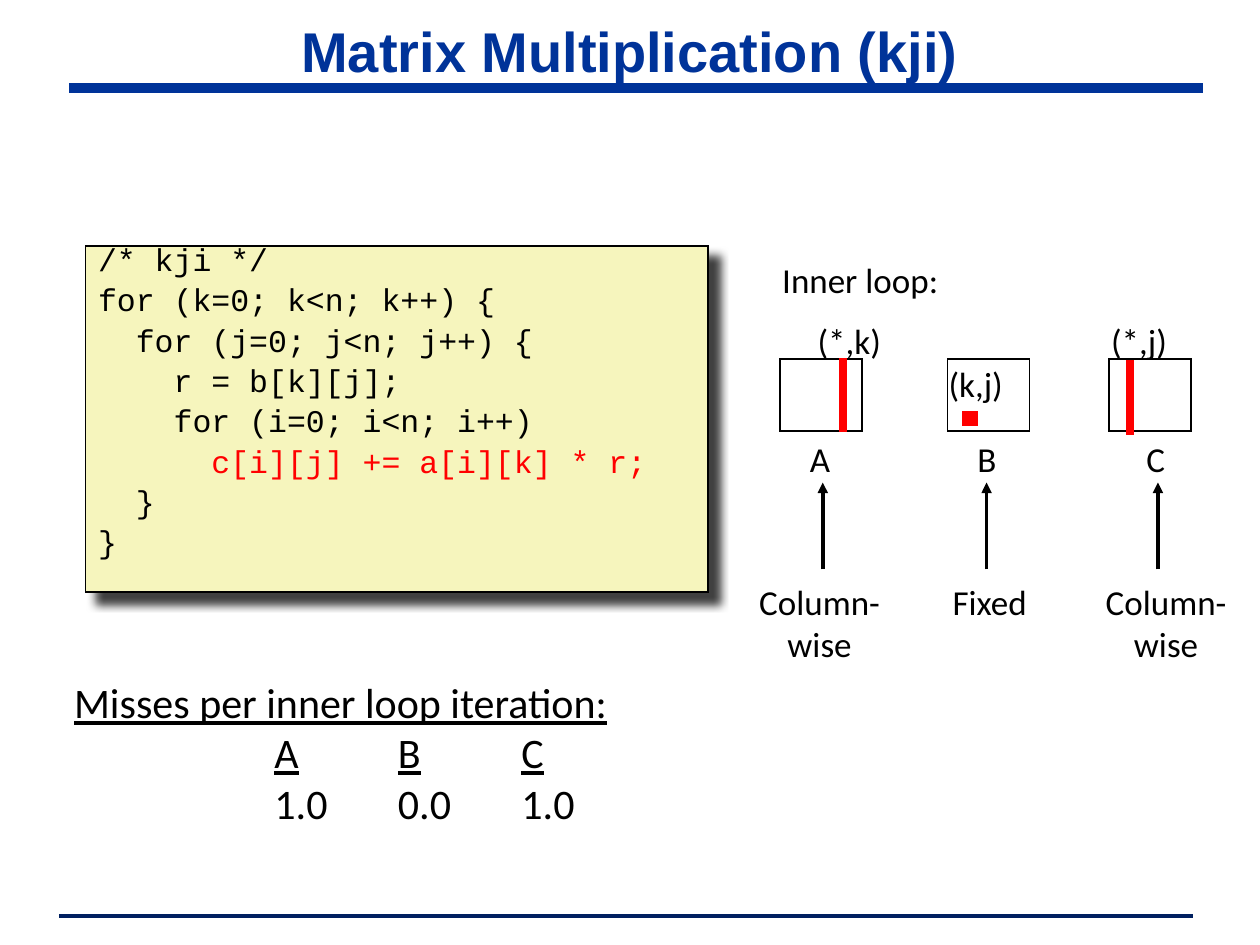
from typing import NamedTuple

from lxml import etree
from pptx import Presentation
from pptx import util as u
from pptx.dml.color import RGBColor
from pptx.enum import shapes, text
from pptx.oxml import ns

COLORS = {
    "black": "000000", "white": "FFFFFF", "red": "FF0000",
    "title": "003399", "footer": "002060", "code": "F6F5BD",
}
CODE = """/* kji */
for (k=0; k<n; k++) {
  for (j=0; j<n; j++) {
    r = b[k][j];
    for (i=0; i<n; i++)
      c[i][j] += a[i][k] * r;
  }
}"""
HOT_LINE = 5
LEFT, CENTER = text.PP_ALIGN.LEFT, text.PP_ALIGN.CENTER


class Matrix(NamedTuple):
    name: str
    left: float
    name_left: float
    index: str
    index_at: tuple[float, float, float, float]
    arrow_x: float
    access: str
    access_at: tuple[float, float, float, float]


MATRICES = [
    Matrix("A", 6.19, 6.33, "(*,k)", (6.39, 2.49, 0.72, 0.43), 6.53,
           "Column-\nwise", (5.92, 4.56, 1.17, 0.77)),
    Matrix("B", 7.52, 7.66, "(k,j)", (7.43, 2.83, 0.65, 0.43), 7.83,
           "Fixed", (7.46, 4.56, 0.79, 0.43)),
    Matrix("C", 8.8, 9, "(*,j)", (8.72, 2.49, 0.66, 0.43), 9.19,
           "Column-\nwise", (8.67, 4.56, 1.17, 0.77)),
]


def color(name: str) -> RGBColor:
    return RGBColor.from_string(COLORS[name])


def add_child(parent, tag: str, **attributes: str):
    return etree.SubElement(parent, ns.qn(tag), attributes)


def add_line(page, start: tuple[float, float], end: tuple[float, float],
             ink: str, width: float, arrow: bool = False) -> None:
    line = page.shapes.add_connector(
        shapes.MSO_CONNECTOR.STRAIGHT, *map(u.Inches, start + end))
    line.line.color.rgb = color(ink)
    line.line.width = u.Pt(width)
    if arrow:
        add_child(line.line._get_or_add_ln(), "a:tailEnd", type="triangle")
    add_child(line._element.spPr, "a:effectLst")


def add_rectangle(page, at: tuple[float, float, float, float], fill: str,
                  ink: str = "black", width: float = 1):
    box = page.shapes.add_shape(
        shapes.MSO_SHAPE.RECTANGLE, *map(u.Inches, at))
    box.shadow.inherit = False
    box.fill.solid()
    box.fill.fore_color.rgb = color(fill)
    box.line.color.rgb = color(ink)
    box.line.width = u.Pt(width)
    add_child(box.line._get_or_add_ln(), "a:miter", lim="800000")
    return box


def format_font(font, face: str, size: float, ink: str = "black") -> None:
    font.name = face
    font.size = u.Pt(size)
    font.color.rgb = color(ink)


def add_label(page, at: tuple[float, float, float, float], words: str,
              align=LEFT, size: float = 20, wrap: bool = False):
    box = page.shapes.add_textbox(*map(u.Inches, at))
    box.text_frame.text = words
    box.text_frame.word_wrap = wrap
    for para in box.text_frame.paragraphs:
        para.alignment = align
        for span in para.runs:
            format_font(span.font, "Calibri", size)
    return box


def add_title(page) -> None:
    box = add_label(page, (0.5, 0.16, 9, 0.47), "Matrix Multiplication (kji)",
                    CENTER, wrap=True)
    box.text_frame.vertical_anchor = text.MSO_ANCHOR.MIDDLE
    font = box.text_frame.paragraphs[0].runs[0].font
    format_font(font, "Arial", 32, "title")
    font.bold = True


def add_code(page) -> None:
    box = add_rectangle(page, (0.68, 1.95, 4.94, 2.75), "code")
    effects = box._element.spPr.find(ns.qn("a:effectLst"))
    shadow = add_child(effects, "a:outerShdw", blurRad=str(u.Pt(5)),
                       dist=str(u.Pt(8.5)), dir="2700000", algn="ctr",
                       rotWithShape="0")
    shade = add_child(shadow, "a:srgbClr", val=COLORS["black"])
    add_child(shade, "a:alpha", val="75000")

    frame = box.text_frame
    frame.vertical_anchor = text.MSO_ANCHOR.TOP
    frame.text = CODE
    for row, para in enumerate(frame.paragraphs):
        para.alignment = LEFT
        para.line_spacing = 0.65
        para.space_before = u.Pt(9 if row else 0)
        ink = "red" if row == HOT_LINE else "black"
        format_font(para.runs[0].font, "Courier New", 18, ink)


def add_matrix(page, matrix: Matrix) -> None:
    add_rectangle(page, (matrix.left, 2.85, 0.65, 0.57), "white")
    add_label(page, (matrix.name_left, 3.42, 0.37, 0.43), matrix.name)
    add_label(page, matrix.index_at, matrix.index)
    add_line(page, (matrix.arrow_x, 4.52), (matrix.arrow_x, 3.83),
             "black", 2, arrow=True)
    add_label(page, matrix.access_at, matrix.access, CENTER)


def add_misses(page) -> None:
    box = add_label(page, (0.49, 5.32, 5.43, 1.34),
                    "Misses per inner loop iteration:", size=24, wrap=True)
    heading = box.text_frame.paragraphs[0]
    heading.runs[0].font.underline = True
    for values, underlined in (("ABC", True), (("1.0", "0.0", "1.0"), False)):
        para = box.text_frame.add_paragraph()
        tabs = add_child(para._p.get_or_add_pPr(), "a:tabLst")
        for column, value in enumerate(values):
            stop = u.Inches(1.59 + 0.98 * column)
            add_child(tabs, "a:tab", pos=str(stop), algn="l")
            for words, underline in (("\t", False), (value, underlined)):
                span = para.add_run()
                span.text = words
                format_font(span.font, "Calibri", 24)
                span.font.underline = underline


def main() -> None:
    deck = Presentation()
    deck.slide_width, deck.slide_height = u.Inches(10), u.Inches(7.5)
    page = deck.slides.add_slide(deck.slide_layouts[6])

    add_line(page, (0.47, 7.27), (9.47, 7.27), "footer", 2.25)
    add_line(page, (0.55, 0.7), (9.55, 0.7), "title", 6)
    add_title(page)
    add_code(page)
    add_label(page, (6.11, 2, 1.45, 0.43), "Inner loop:")
    for matrix in MATRICES:
        add_matrix(page, matrix)
    add_rectangle(page, (7.67, 3.29, 0.06, 0.06), "black", "red", 4.5)
    for x, top in ((6.69, 2.84), (8.97, 2.86)):
        add_line(page, (x, top + 0.59), (x, top), "red", 4.5)
    add_misses(page)

    deck.save("out.pptx")


if __name__ == "__main__":
    main()
